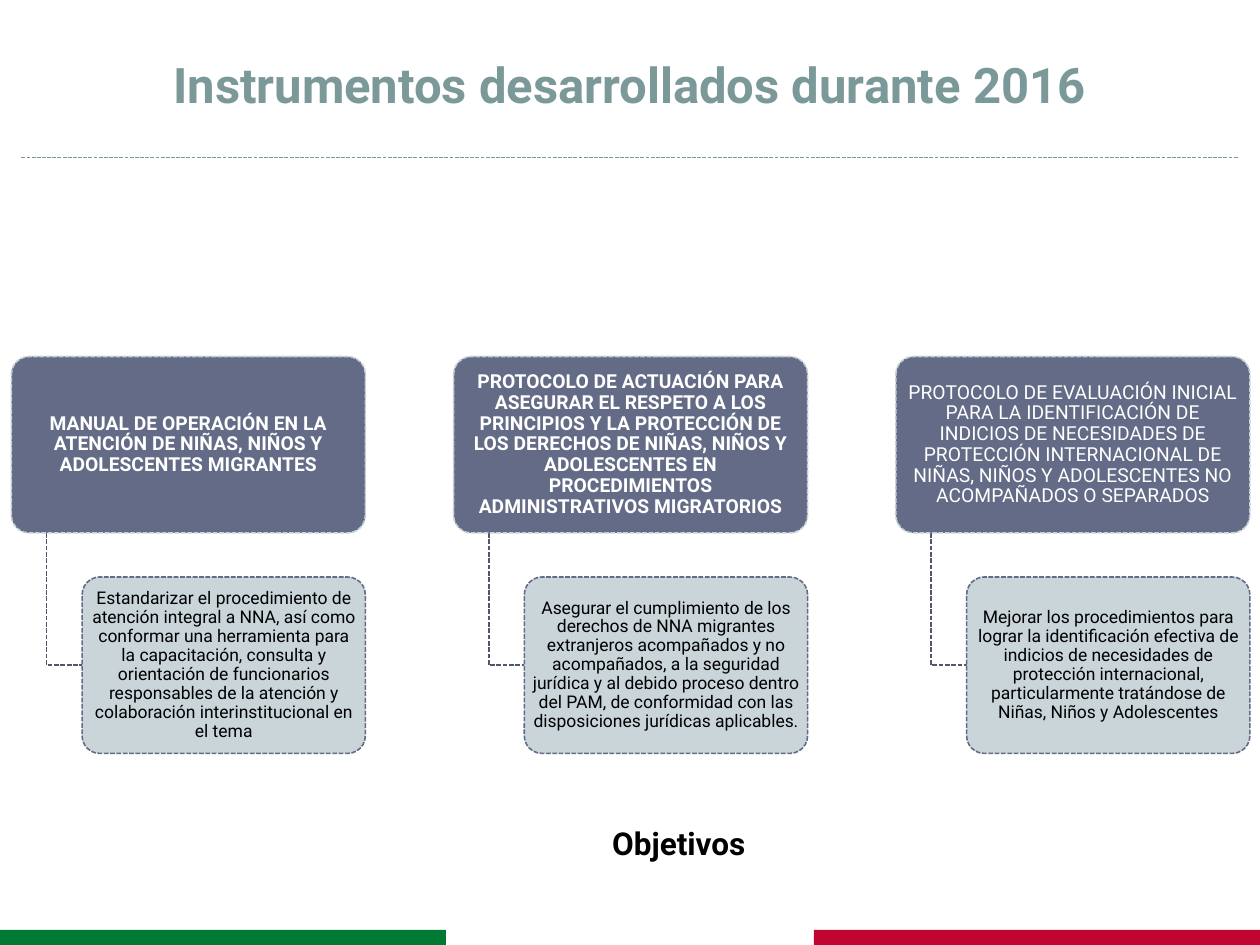
"""Slide on the instruments developed during 2016 and their objectives."""
from dataclasses import dataclass

from lxml.etree import SubElement
from pptx import Presentation
from pptx.dml.color import RGBColor
from pptx.enum.dml import MSO_LINE
from pptx.enum.shapes import MSO_CONNECTOR, MSO_SHAPE
from pptx.enum.text import MSO_ANCHOR, PP_ALIGN
from pptx.oxml.ns import qn
from pptx.util import Inches, Pt


@dataclass(frozen=True)
class Theme:
    font: str = "Roboto"
    sage: str = "7C999A"
    slate: str = "646B86"
    dark_slate: str = "50566B"
    mist: str = "C5D1D7"
    white: str = "FFFFFF"
    black: str = "000000"
    green: str = "007935"
    red: str = "C20430"
    title_size: float = 28
    label_size: float = 18
    heading_size: float = 11
    detail_size: float = 10
    rule_width: float = 0.75
    outline_width: float = 0.9


def draw_line(line, color, width):
    line.color.rgb = RGBColor.from_string(color)
    line.width = Pt(width)
    line.dash_style = MSO_LINE.SQUARE_DOT
    line._get_or_add_ln().find(qn("a:prstDash")).set("val", "sysDash")


def write(shape, text, size, color, bold=False, align=PP_ALIGN.CENTER, spacing=1.0):
    frame = shape.text_frame
    frame.text = text
    frame.vertical_anchor = MSO_ANCHOR.MIDDLE
    para = frame.paragraphs[0]
    para.alignment = align
    para.line_spacing = spacing
    font = para.runs[0].font
    font.name = theme.font
    font.size = Pt(size)
    font.bold = bold
    font.color.rgb = RGBColor.from_string(color)


theme = Theme()
deck = Presentation()
deck.slide_width, deck.slide_height = Inches(10), Inches(7.5)
page = deck.slides.add_slide(deck.slide_layouts[6])
shapes = page.shapes

band_width, band_height = Inches(3.54), Inches(0.12)
for left, color in ((0, theme.green), (deck.slide_width - band_width, theme.red)):
    band = shapes.add_shape(
        MSO_SHAPE.RECTANGLE, left, deck.slide_height - band_height, band_width, band_height
    )
    band.shadow.inherit = False
    band.fill.solid()
    band.fill.fore_color.rgb = RGBColor.from_string(color)
    band.line.fill.background()

rule = shapes.add_connector(
    MSO_CONNECTOR.STRAIGHT, Inches(0.17), Inches(1.25), Inches(9.83), Inches(1.25)
)
draw_line(rule.line, theme.sage, theme.rule_width)
SubElement(rule._element.spPr, qn("a:effectLst"))

title = shapes.add_textbox(Inches(0.33), Inches(0.25), Inches(9.33), Inches(0.83))
title.text_frame.word_wrap = True
write(title, "Instrumentos desarrollados durante 2016", theme.title_size, theme.sage, bold=True)

instruments = [
    (
        "MANUAL DE OPERACIÓN EN LA ATENCIÓN DE NIÑAS, NIÑOS Y ADOLESCENTES MIGRANTES",
        True,
        "Estandarizar el procedimiento de atención integral a NNA, así como conformar una "
        "herramienta para la capacitación, consulta y orientación de funcionarios responsables "
        "de la atención y colaboración interinstitucional en el tema",
    ),
    (
        "PROTOCOLO DE ACTUACIÓN PARA ASEGURAR EL RESPETO A LOS PRINCIPIOS Y LA PROTECCIÓN DE "
        "LOS DERECHOS DE NIÑAS, NIÑOS Y ADOLESCENTES EN PROCEDIMIENTOS ADMINISTRATIVOS "
        "MIGRATORIOS",
        True,
        "Asegurar el cumplimiento de los derechos de NNA migrantes extranjeros acompañados y "
        "no acompañados, a la seguridad jurídica y al debido proceso dentro del PAM, de "
        "conformidad con las disposiciones jurídicas aplicables.",
    ),
    (
        "PROTOCOLO DE EVALUACIÓN INICIAL PARA LA IDENTIFICACIÓN DE INDICIOS DE NECESIDADES DE "
        "PROTECCIÓN INTERNACIONAL DE NIÑAS, NIÑOS Y ADOLESCENTES NO ACOMPAÑADOS O SEPARADOS",
        False,
        "Mejorar los procedimientos para lograr la identificación efectiva de indicios de "
        "necesidades de protección internacional, particularmente tratándose de Niñas, Niños "
        "y Adolescentes",
    ),
]
first_left, column_pitch = Inches(0.09), Inches(3.51)
box_width, box_height = Inches(2.81), Inches(1.4)
indent = box_width // 10
heading_top = Inches(2.83)
heading_bottom = heading_top + box_height
detail_top = heading_bottom + box_height // 4
detail_middle = detail_top + box_height // 2

for column, (heading, bold, detail) in enumerate(instruments):
    left = first_left + column * column_pitch
    detail_left = left + 2 * indent

    builder = shapes.build_freeform(left + indent, heading_bottom)
    builder.add_line_segments(
        [(left + indent, detail_middle), (detail_left, detail_middle)], close=False
    )
    elbow = builder.convert_to_shape()
    elbow.shadow.inherit = False
    elbow.fill.background()
    draw_line(elbow.line, theme.dark_slate, theme.outline_width)

    for text, x, y, width, fill, outline, size, color, strong, opacity, inset in (
        (heading, left, heading_top, box_width, theme.slate, theme.mist,
         theme.heading_size, theme.white, bold, 100, 0.02),
        (detail, detail_left, detail_top, box_width - 2 * indent, theme.mist, theme.slate,
         theme.detail_size, theme.black, False, 90, 0.01),
    ):
        box = shapes.add_shape(MSO_SHAPE.ROUNDED_RECTANGLE, x, y, width, box_height)
        box.adjustments[0] = 0.1
        box.shadow.inherit = False
        box.fill.solid()
        box.fill.fore_color.rgb = RGBColor.from_string(fill)
        if opacity < 100:
            tint = box._element.spPr.find(qn("a:solidFill")).find(qn("a:srgbClr"))
            SubElement(tint, qn("a:alpha")).set("val", str(opacity * 1000))
        draw_line(box.line, outline, theme.outline_width)
        frame = box.text_frame
        frame.word_wrap = True
        frame.margin_left = frame.margin_right = Inches(0.02)
        frame.margin_top = frame.margin_bottom = Inches(inset)
        write(box, text, size, color, strong, spacing=0.9)

label = shapes.add_textbox(Inches(4.76), Inches(6.49), Inches(1.35), Inches(0.4))
label.text_frame.word_wrap = False
write(label, "Objetivos", theme.label_size, theme.black, bold=True, align=PP_ALIGN.LEFT)

deck.save("out.pptx")
